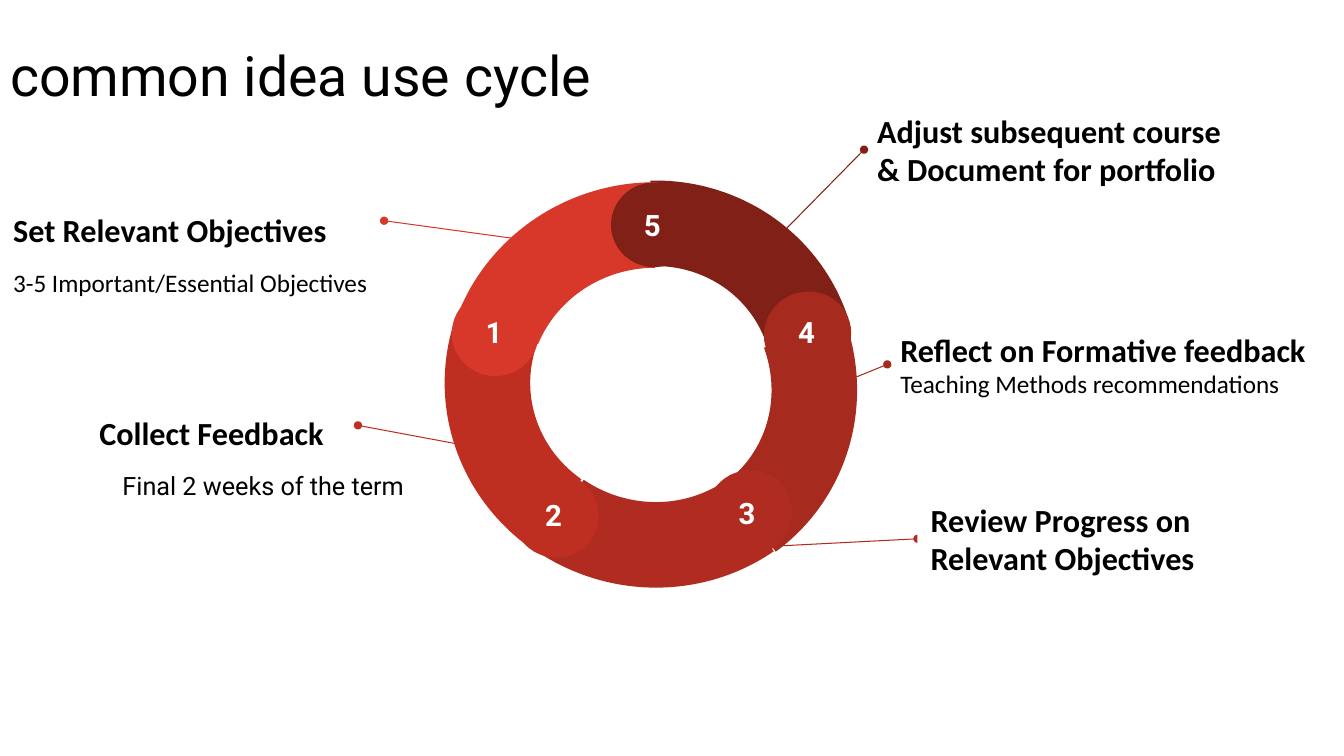
from lxml import etree
from pptx import Presentation
from pptx import util as u
from pptx.dml import color
from pptx.enum import shapes, text
from pptx.oxml import ns

COLORS = {
    "ink": "000000", "paper": "FFFFFF",
    1: "D83829", 2: "BE2F22", 3: "B02C20", 4: "A72A1E", 5: "802017",
}
ALIGN = text.PP_ALIGN
HEADING = {"name": "Calibri", "size": u.Pt(23), "bold": True}
DETAIL = {"name": "Calibri", "size": u.Pt(18), "bold": False}
ROBOTO_DETAIL = {**DETAIL, "name": "Roboto"}
NUMBER = {"name": "Roboto", "size": u.Pt(21), "bold": True}
TITLE = {"name": "Roboto", "size": u.Pt(39.6), "bold": False}
MARGINS = {f"margin_{side}": u.Inches(0.13) for side in ("left", "top", "right", "bottom")}
MIDDLE = {**MARGINS, "word_wrap": True, "vertical_anchor": text.MSO_ANCHOR.MIDDLE}
TOP = {**MIDDLE, "vertical_anchor": text.MSO_ANCHOR.TOP}

CALLOUTS = [
    (1, (0, 1.84, 4.93, 1.35), (5.64, 2.44), (3.81, 2.19), [
        ("Set Relevant Objectives", HEADING, ALIGN.LEFT, 0),
        ("3-5 Important/Essential Objectives", DETAIL, ALIGN.LEFT, 13)]),
    (2, (0, 3.86, 4.2, 1.35), (5.21, 4.53), (3.55, 4.22), [
        ("Collect Feedback", HEADING, ALIGN.CENTER, 0),
        ("Final 2 weeks of the term ", ROBOTO_DETAIL, ALIGN.RIGHT, 13)]),
    (3, (9.1, 4.8, 4.23, 1.09), (6.88, 5.46), None, [
        ("Review Progress on", HEADING, ALIGN.LEFT, 0),
        ("Relevant Objectives", HEADING, ALIGN.LEFT, 0)]),
    (5, (8.57, 0.81, 4.76, 1.35), (7.66, 2.41), None, [
        ("Adjust subsequent course", HEADING, ALIGN.LEFT, 0),
        ("& Document for portfolio", HEADING, ALIGN.LEFT, 0)]),
    (4, (8.8, 2.98, 4.53, 1.27), (7.88, 3.99), None, [
        ("Reflect on Formative feedback", HEADING, ALIGN.LEFT, 0),
        ("Teaching Methods recommendations", DETAIL, ALIGN.LEFT, 0)]),
]

RING_BOX = (4.39, 1.74, 4.15, 4.15)
ARC_ANGLES = (126.03, 168.68, 0.21)
CAP_HALVES = [(0, (61.9, 149.96)), (179.3, (40.28, 171.84))]
ARC, CAP = "arc", "cap"
RING_PARTS = [
    (ARC, 2, (0.07, 0, 4.04, 4.14), 277),
    (ARC, 4, (0.04, 0, 4.04, 4.15), 132),
    (ARC, 5, (0.04, 0.01, 4.04, 4.15), 60),
    (CAP, 4, (3.2, 1.14, 0.84, 0.87), 67.1),
    (ARC, 3, (0, 0.04, 4.15, 4.04), 204),
    (CAP, 2, (0.69, 2.95, 0.86, 0.84), 211.1),
    (ARC, 1, (0.01, 0.07, 4.15, 4.04), 350),
    (CAP, 5, (1.67, 0.07, 0.86, 0.84), 357.1),
    (CAP, 3, (2.61, 2.93, 0.86, 0.84), 139.1),
    (CAP, 1, (0.1, 1.14, 0.84, 0.86), 284.1),
]


def rgb(key):
    """Return the palette colour stored under a key."""
    return color.RGBColor.from_string(COLORS[key])


def inches(values):
    """Convert a sequence of numbers to lengths."""
    return [u.Inches(value) for value in values]


def apply(target, values):
    """Set every attribute in a dict of format values."""
    for name, value in values.items():
        setattr(target, name, value)


def write(shape, frame_format, lines, ink="ink"):
    """Fill a shape with formatted paragraphs."""
    frame = shape.text_frame
    apply(frame, frame_format)
    for index, (words, font, alignment, gap) in enumerate(lines):
        paragraph = frame.add_paragraph() if index else frame.paragraphs[0]
        paragraph.alignment = alignment
        if gap:
            paragraph.space_before = u.Pt(gap)
        run = paragraph.add_run()
        run.text = words
        apply(run.font, font)
        run.font.color.rgb = rgb(ink)


def add_filled(parent, preset, box, key, rotation=0, adjustments=()):
    """Add a flat preset shape without outline or shadow."""
    shape = parent.shapes.add_shape(preset, *inches(box))
    shape.shadow.inherit = False
    shape.fill.solid()
    shape.fill.fore_color.rgb = rgb(key)
    shape.line.fill.background()
    shape.rotation = rotation
    for index, value in enumerate(adjustments):
        shape.adjustments[index] = value
    return shape


def add_title(slide, box):
    """Place and format the title placeholder."""
    title = slide.shapes.title
    apply(title, dict(zip(("left", "top", "width", "height"), inches(box))))
    frame_format = {"word_wrap": True, "vertical_anchor": text.MSO_ANCHOR.MIDDLE}
    write(title, frame_format, [("common idea use cycle", TITLE, ALIGN.LEFT, 0)])
    title.text_frame.paragraphs[0].line_spacing = 0.9


def add_callout(slide, box, step, start, end, lines):
    """Add a label with a dotted leader line, joined to its left side by default."""
    left, top, width, height = box
    group = slide.shapes.add_group_shape()
    finish = end or (left, top + height / 2)
    leader = group.shapes.add_connector(
        shapes.MSO_CONNECTOR.STRAIGHT, *inches(start + finish))
    leader.line.color.rgb = rgb(step)
    leader.line.width = u.Pt(0.75)
    outline = leader.line.fill._xPr
    etree.SubElement(outline, ns.qn("a:tailEnd"), type="oval")
    etree.SubElement(leader._element.spPr, ns.qn("a:effectLst"))
    if step == 3:
        label = add_filled(group, shapes.MSO_SHAPE.RECTANGLE, box, "paper")
    else:
        label = group.shapes.add_textbox(*inches(box))
    write(label, MIDDLE, lines)
    if end is None:
        leader.end_connect(label, 1)


def add_ring(slide, box):
    """Add the five overlapping ring segments and their numbers."""
    group = slide.shapes.add_group_shape()
    numbers = []
    for kind, step, (x, y, width, height), rotation in RING_PARTS:
        left, top = box[0] + x, box[1] + y
        part_box = (left, top, width, height)
        if kind == ARC:
            add_filled(group, shapes.MSO_SHAPE.BLOCK_ARC, part_box, step,
                       rotation, ARC_ANGLES)
            continue
        for turn, angles in CAP_HALVES:
            add_filled(group, shapes.MSO_SHAPE.PIE, part_box, step,
                       (rotation + turn) % 360, angles)
        numbers.append((step, (left + 0.03, top + 0.11, 0.76, 0.39)))
    for step, number_box in sorted(numbers):
        number = group.shapes.add_textbox(*inches(number_box))
        write(number, TOP, [(str(step), NUMBER, ALIGN.CENTER, 0)], "paper")


def main():
    """Build the cycle slide and save it."""
    presentation = Presentation()
    presentation.slide_width, presentation.slide_height = inches((13.33, 7.5))
    slide = presentation.slides.add_slide(presentation.slide_layouts[5])
    add_title(slide, (0, 0.54, 11.5, 0.47))
    for step, box, start, end, lines in CALLOUTS:
        add_callout(slide, box, step, start, end, lines)
    add_ring(slide, RING_BOX)
    presentation.save("out.pptx")


if __name__ == "__main__":
    main()
